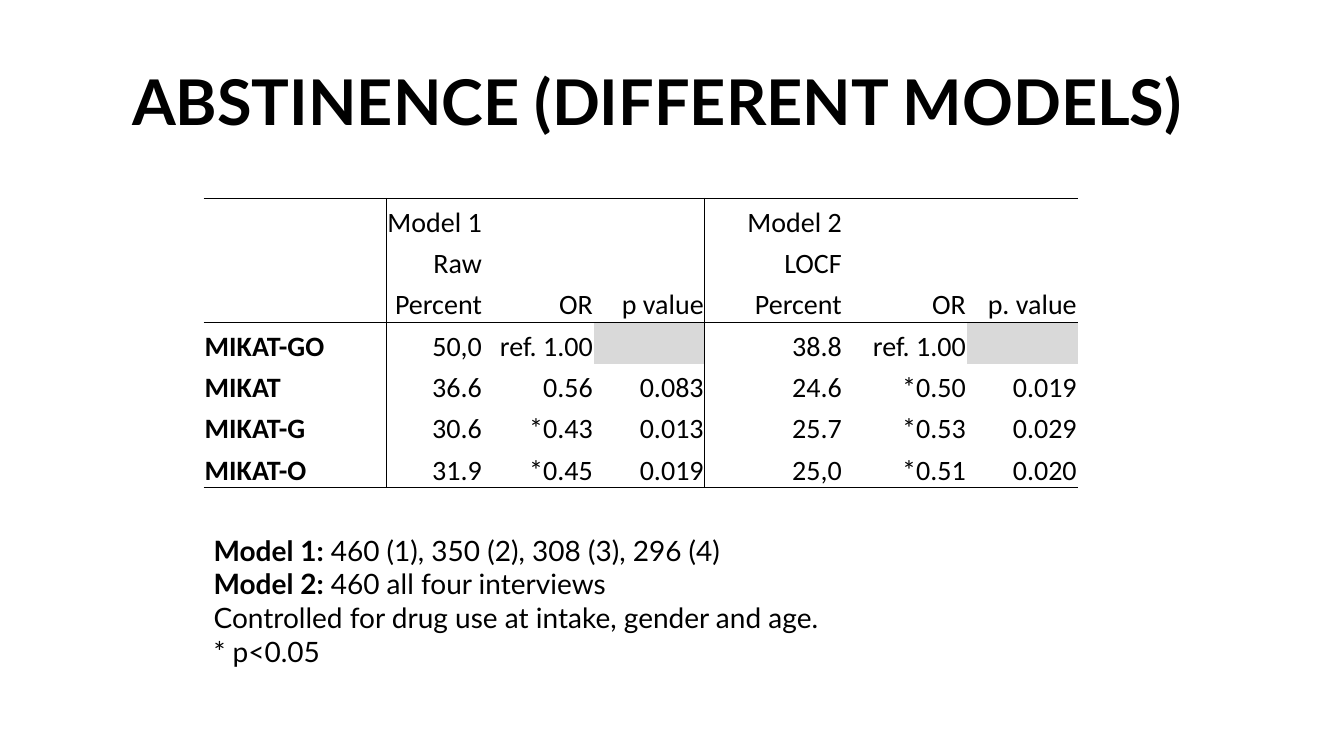
from pptx import Presentation
from pptx.dml.color import RGBColor
from pptx.enum.text import MSO_ANCHOR, MSO_AUTO_SIZE, PP_ALIGN
from pptx.oxml import parse_xml
from pptx.oxml.ns import nsdecls
from pptx.util import Inches, Pt

BOTTOM = MSO_ANCHOR.BOTTOM
LEFT, RIGHT = PP_ALIGN.LEFT, PP_ALIGN.RIGHT
NO_FIT, GROW = MSO_AUTO_SIZE.NONE, MSO_AUTO_SIZE.SHAPE_TO_FIT_TEXT

COLUMNS = [1.81, 0.96, 1.1, 1.1, 1.37, 1.23, 1.1]
ROWS = [
    ["", "", "", "", "", "", ""],
    ["", "Model 1", "", "", "Model 2", "", ""],
    ["", "Raw", "", "", "LOCF", "", ""],
    ["", "Percent", "OR", "p value", "Percent", "OR", "p. value"],
    ["MIKAT-GO", "50,0", "ref. 1.00", "", "38.8", "ref. 1.00", ""],
    ["MIKAT", "36.6", "0.56", "0.083", "24.6", "*0.50", "0.019"],
    ["MIKAT-G", "30.6", "*0.43", "0.013", "25.7", "*0.53", "0.029"],
    ["MIKAT-O", "31.9", "*0.45", "0.019", "25,0", "*0.51", "0.020"],
    ["", "", "", "", "", "", ""],
]
RULES_ABOVE = (1, 4, 8)
RULES_LEFT = (1, 4)
REFERENCE_CELLS = ((4, 3), (4, 6))
NOTES = [
    [("Model 1: ", True), ("460 (1), 350 (2), 308 (3), 296 (4)", False)],
    [("Model 2: ", True), ("460 all four interviews", False)],
    [("Controlled for drug use at intake, gender and age.", False)],
    [("* p<0.05", False)],
]


def color(value):
    return RGBColor.from_string(value)


class SlideBuilder:
    ink = "000000"
    shade = "D9D9D9"
    heading_font = "Lato"
    table_font = "Calibri"

    def __init__(self, slide):
        self.s = slide

    def run(self, p, text, font, size, bold=False):
        r = p.add_run()
        r.text = text
        r.font.name = font
        r.font.size = Pt(size)
        r.font.bold = bold
        r.font.color.rgb = color(self.ink)

    def title(self, text, left, top, width, height):
        sp = self.s.shapes.title
        sp.left, sp.top = Inches(left), Inches(top)
        sp.width, sp.height = Inches(width), Inches(height)
        tf = sp.text_frame
        tf.word_wrap = True
        tf.auto_size = NO_FIT
        tf.vertical_anchor = BOTTOM
        tf.margin_left = tf.margin_right = tf.margin_top = tf.margin_bottom = 0
        p = tf.paragraphs[0]
        p.alignment = LEFT
        p.line_spacing = 0.89
        self.run(p, text, self.heading_font, 45, True)

    def text(self, lines, left, top, width, height):
        sp = self.s.shapes.add_textbox(
            Inches(left), Inches(top), Inches(width), Inches(height))
        tf = sp.text_frame
        tf.word_wrap = True
        tf.auto_size = GROW
        for i, line in enumerate(lines):
            p = tf.add_paragraph() if i else tf.paragraphs[0]
            for text, bold in line:
                self.run(p, text, self.heading_font, 20, bold)

    def border(self, cell, side, width):
        if width:
            paint = f'<a:solidFill><a:srgbClr val="{self.ink}"/></a:solidFill>'
        else:
            paint = "<a:noFill/>"
        cell._tc.get_or_add_tcPr().append(parse_xml(
            f'<a:ln{side} {nsdecls("a")} w="{Pt(width)}">{paint}</a:ln{side}>'))

    def cell(self, cell, row, col, text):
        ruled = 1 <= row <= 7
        widths = {
            "L": 0.5 if ruled and col in RULES_LEFT else 0,
            "R": 0.5 if ruled and col + 1 in RULES_LEFT else 0,
            "T": 1 if row in RULES_ABOVE else 0,
            "B": 1 if row + 1 in RULES_ABOVE else 0,
        }
        for side, width in widths.items():
            self.border(cell, side, width)
        if (row, col) in REFERENCE_CELLS:
            cell.fill.solid()
            cell.fill.fore_color.rgb = color(self.shade)
        else:
            cell.fill.background()
        cell.margin_left = cell.margin_right = cell.margin_top = Inches(0.01)
        cell.margin_bottom = 0
        cell.vertical_anchor = BOTTOM
        p = cell.text_frame.paragraphs[0]
        p.alignment = RIGHT if col else LEFT
        if text:
            self.run(p, text, self.table_font, 20, col == 0)

    def table(self, rows, columns, left, top, row_height):
        frame = self.s.shapes.add_table(
            len(rows), len(columns), Inches(left), Inches(top),
            Inches(sum(columns)), Inches(row_height * len(rows)))
        table = frame.table
        table.first_row = table.horz_banding = False
        for column, width in zip(table.columns, columns):
            column.width = Inches(width)
        for i, row in enumerate(rows):
            table.rows[i].height = Inches(row_height)
            for j, text in enumerate(row):
                self.cell(table.cell(i, j), i, j, text)


def main():
    prs = Presentation()
    prs.slide_width, prs.slide_height = Inches(13.33), Inches(7.5)
    b = SlideBuilder(prs.slides.add_slide(prs.slide_layouts[5]))
    b.title("ABSTINENCE (DIFFERENT MODELS)", 1.31, 0.16, 11.33, 1.22)
    b.text(NOTES, 2.02, 5.24, 7.87, 1.45)
    b.table(ROWS, COLUMNS, 2.02, 1.56, 0.41)
    prs.save("out.pptx")


if __name__ == "__main__":
    main()
